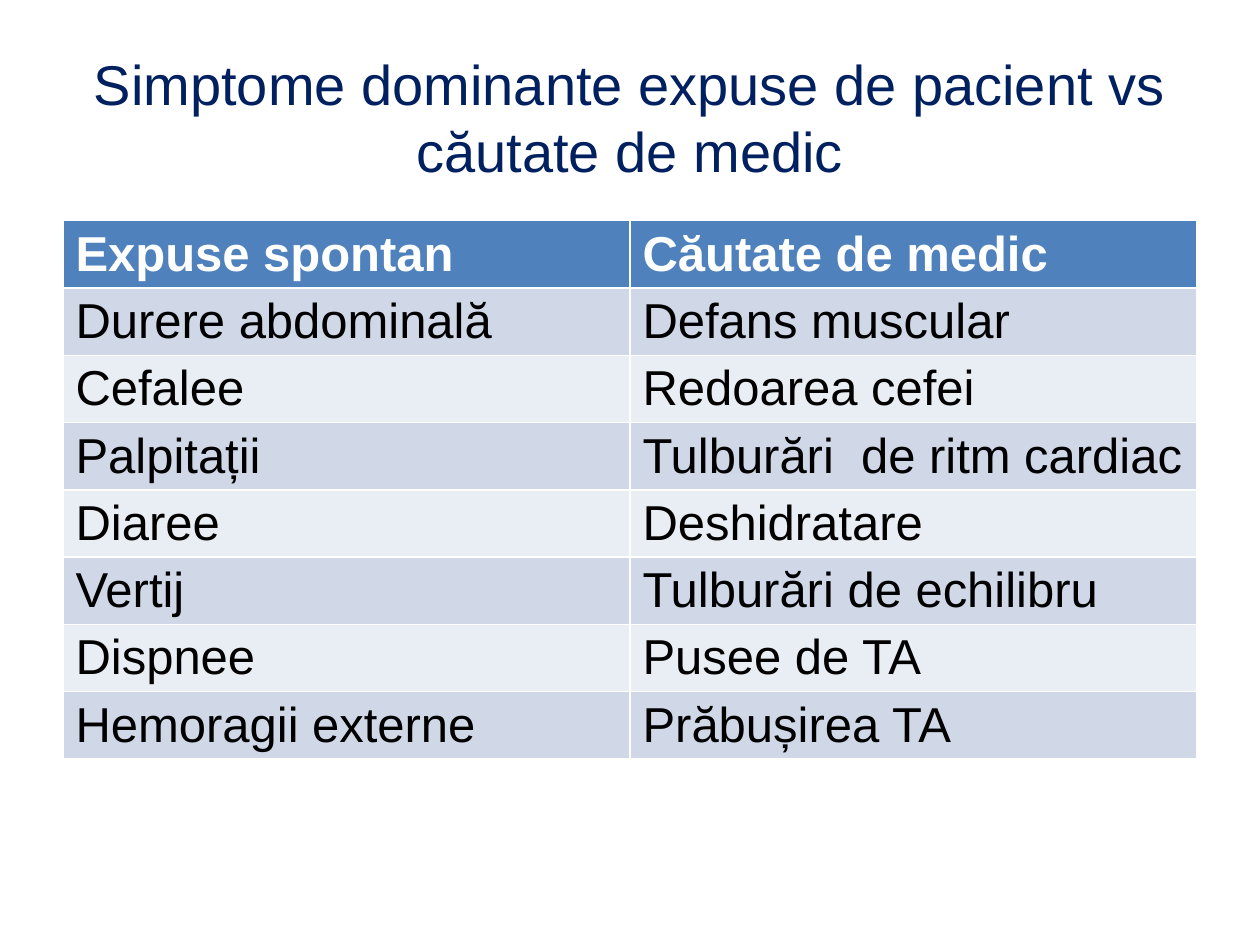
import pptx
import pptx.dml.color
import pptx.enum.text
import pptx.util
from pptx.util import Cm

COLORS = {
    "title": "002060",
    "header": "4F81BD",
    "header_text": "FFFFFF",
    "band_dark": "D0D8E8",
    "band_light": "E9EDF4",
    "text": "000000",
}
ROWS = [
    ("Expuse spontan", "Căutate de medic"),
    ("Durere abdominală", "Defans muscular"),
    ("Cefalee", "Redoarea cefei"),
    ("Palpitații", "Tulburări  de ritm cardiac"),
    ("Diaree", "Deshidratare"),
    ("Vertij", "Tulburări de echilibru"),
    ("Dispnee", "Pusee de TA"),
    ("Hemoragii externe", "Prăbușirea TA"),
]


def rgb(name):
    return pptx.dml.color.RGBColor.from_string(COLORS[name])


def add_run(p, text, size, color, bold=False):
    r = p.add_run()
    r.text = text
    r.font.name = "Arial"
    r.font.size = pptx.util.Pt(size)
    r.font.bold = bold
    r.font.color.rgb = rgb(color)


prs = pptx.Presentation()
prs.slide_width, prs.slide_height = Cm(25.4), Cm(19.05)
s = prs.slides.add_slide(prs.slide_layouts[5])

# Title
title = s.shapes.title
title.left, title.top, title.width, title.height = Cm(1.27), Cm(0.76), Cm(22.86), Cm(3.18)
tf = title.text_frame
tf.word_wrap = True
tf.vertical_anchor = pptx.enum.text.MSO_ANCHOR.MIDDLE
p = tf.paragraphs[0]
p.alignment = pptx.enum.text.PP_ALIGN.CENTER
add_run(p, "Simptome dominante expuse de pacient vs căutate de medic", 32, "title")

# Symptom table: the default table style supplies the white borders
row_height = Cm(1.35)
table = s.shapes.add_table(
    len(ROWS), 2, Cm(1.27), Cm(4.45), Cm(22.86), row_height * len(ROWS)
).table
for i, row in enumerate(ROWS):
    table.rows[i].height = row_height
    is_header = i == 0
    fill = "header" if is_header else "band_dark" if i % 2 else "band_light"
    for j, text in enumerate(row):
        cell = table.cell(i, j)
        cell.fill.solid()
        cell.fill.fore_color.rgb = rgb(fill)
        color = "header_text" if is_header else "text"
        add_run(cell.text_frame.paragraphs[0], text, 28, color, bold=is_header)

prs.save("out.pptx")
